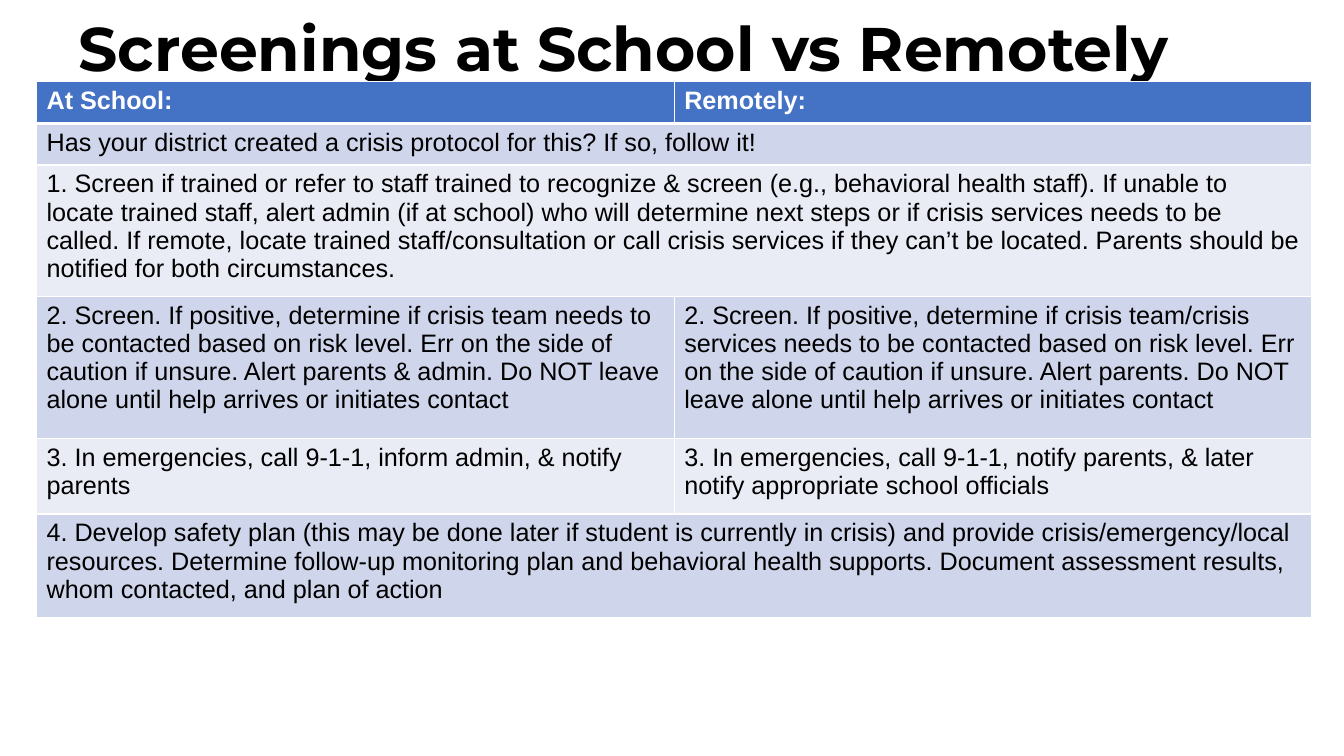
from lxml.etree import SubElement
from pptx import Presentation
from pptx.dml.color import RGBColor
from pptx.enum.text import MSO_ANCHOR as Anchor
from pptx.oxml.ns import qn
from pptx.util import Cm, Pt


def color(hex_code):
    return RGBColor.from_string(hex_code)


class SlideBuilder:
    BLACK, WHITE = "000000", "FFFFFF"
    HEADER = "4472C4"
    BANDS = ("CFD5EA", "E9EBF5")
    TITLE_FONT, BODY_FONT = "Montserrat", "Arial"

    def __init__(self, slide):
        self.slide = slide

    def format_text(self, frame, name, size, hex_code, bold):
        for paragraph in frame.paragraphs:
            for run in paragraph.runs:
                font = run.font
                font.name, font.size, font.bold = name, Pt(size), bold
                font.color.rgb = color(hex_code)

    def title(self, text, left, top, width, height):
        box = self.slide.shapes.add_textbox(Cm(left), Cm(top), Cm(width), Cm(height))
        frame = box.text_frame
        frame.word_wrap = True
        frame.vertical_anchor = Anchor.MIDDLE
        frame.text = text
        frame.paragraphs[0].line_spacing = 0.9
        self.format_text(frame, self.TITLE_FONT, 44, self.BLACK, True)

    def borders(self, cell, top, bottom):
        properties = cell._tc.get_or_add_tcPr()
        for side, points in (("L", 1), ("R", 1), ("T", top), ("B", bottom)):
            line = SubElement(properties, qn(f"a:ln{side}"), w=str(Pt(points)))
            fill = SubElement(line, qn("a:solidFill"))
            SubElement(fill, qn("a:srgbClr"), val=self.WHITE)

    def table(self, rows, heights, left, top, column_width):
        columns = max(len(texts) for texts in rows)
        table = self.slide.shapes.add_table(
            len(rows), columns, Cm(left), Cm(top),
            Cm(column_width * columns), Cm(sum(heights))).table
        for column in table.columns:
            column.width = Cm(column_width)
        for r, (texts, height) in enumerate(zip(rows, heights)):
            table.rows[r].height = Cm(height)
            header = r == 0
            for c in range(columns):
                cell = table.cell(r, c)
                self.borders(cell, 3 if r == 1 else 1, 3 if header else 1)
                cell.fill.solid()
                cell.fill.fore_color.rgb = color(
                    self.HEADER if header else self.BANDS[(r - 1) % 2])
                if c < len(texts):
                    cell.text_frame.text = texts[c]
                    self.format_text(cell.text_frame, self.BODY_FONT, 18,
                                     self.WHITE if header else self.BLACK, header)
            # A single text spans the whole row
            if len(texts) == 1:
                table.cell(r, 0).merge(table.cell(r, columns - 1))


SCREENING_STEPS = [
    ("At School:", "Remotely:"),
    ("Has your district created a crisis protocol for this? If so, follow it!",),
    ("1. Screen if trained or refer to staff trained to recognize & screen (e.g., "
     "behavioral health staff). If unable to locate trained staff, alert admin (if at "
     "school) who will determine next steps or if crisis services needs to be called. "
     "If remote, locate trained staff/consultation or call crisis services if they "
     "can’t be located. Parents should be notified for both circumstances.",),
    ("2. Screen. If positive, determine if crisis team needs to be contacted based on "
     "risk level. Err on the side of caution if unsure. Alert parents & admin. Do NOT "
     "leave alone until help arrives or initiates contact",
     "2. Screen. If positive, determine if crisis team/crisis services needs to be "
     "contacted based on risk level. Err on the side of caution if unsure. Alert "
     "parents. Do NOT leave alone until help arrives or initiates contact"),
    ("3. In emergencies, call 9-1-1, inform admin, & notify parents",
     "3. In emergencies, call 9-1-1, notify parents, & later notify appropriate "
     "school officials"),
    ("4. Develop safety plan (this may be done later if student is currently in crisis) "
     "and provide crisis/emergency/local resources. Determine follow-up monitoring plan "
     "and behavioral health supports. Document assessment results, whom contacted, and "
     "plan of action",),
]
ROW_HEIGHTS = [1.05, 1.05, 3.1, 3.58, 1.91, 2.6]


def main():
    deck = Presentation()
    deck.slide_width, deck.slide_height = Cm(33.87), Cm(19.05)
    builder = SlideBuilder(deck.slides.add_slide(deck.slide_layouts[6]))

    # Heading
    builder.title("Screenings at School vs Remotely", 1.73, 0.2, 29.85, 2.18)

    # Comparison of the two settings
    builder.table(SCREENING_STEPS, ROW_HEIGHTS, left=0.92, top=2.06, column_width=16.07)

    deck.save("out.pptx")


if __name__ == "__main__":
    main()
